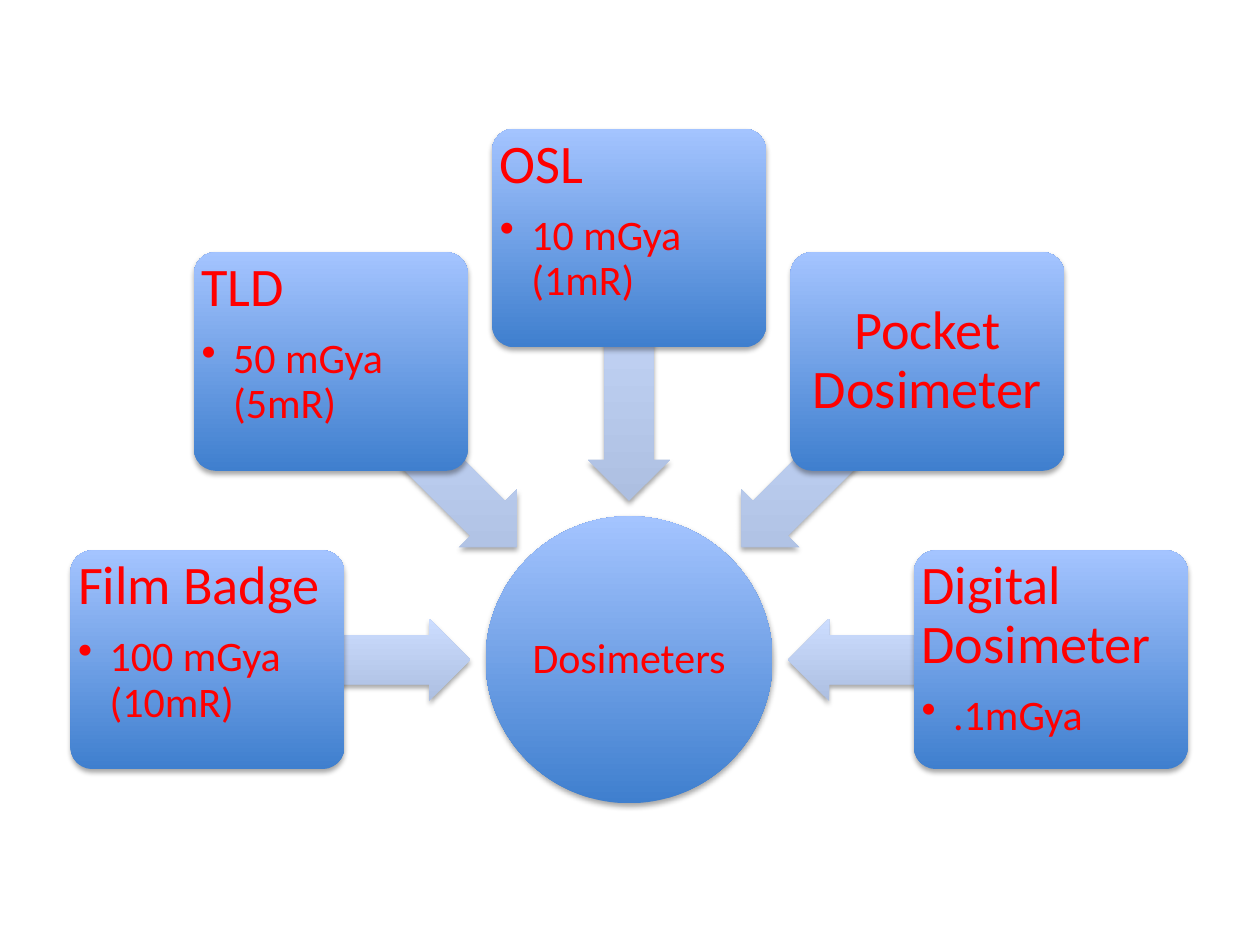
from math import cos, radians, sin

from lxml.etree import SubElement
from pptx import Presentation
from pptx.dml.color import RGBColor
from pptx.enum.shapes import MSO_SHAPE as Shape
from pptx.enum.text import MSO_ANCHOR as Anchor, PP_ALIGN as Align
from pptx.oxml.ns import qn
from pptx.util import Pt

RED = RGBColor(0xFF, 0x00, 0x00)
BOX_DARK = RGBColor(0x3F, 0x7F, 0xCE)
BOX_LIGHT = RGBColor(0xA4, 0xC4, 0xFF)
ARROW_DARK = RGBColor(0xAD, 0xBF, 0xE1)
ARROW_LIGHT = RGBColor(0xCC, 0xDD, 0xFF)

# Radial layout, in points
CENTER_X, CENTER_Y = 359.5, 377
HUB_SIZE = 164
BOX_RADIUS, BOX_WIDTH, BOX_HEIGHT = 241, 156.5, 125
ARROW_RADIUS, ARROW_LENGTH, ARROW_WIDTH = 166, 150.5, 47

# Angle around the hub, heading, bullet
DOSIMETERS = [
    (180, "Film Badge", "100 mGya (10mR)"),
    (135, "TLD", "50 mGya (5mR)"),
    (90, "OSL", "10 mGya (1mR)"),
    (45, "Pocket Dosimeter", None),
    (0, "Digital Dosimeter", ".1mGya"),
]


def write(paragraph, text, size=24, align=Align.LEFT, space_after=0.35, bullet=False):
    paragraph.alignment = align
    paragraph.line_spacing = 0.9
    paragraph.space_after = Pt(round(size * space_after, 1))
    run = paragraph.add_run()
    run.text = text
    run.font.name = "Calibri"
    run.font.size = Pt(size)
    run.font.color.rgb = RED
    if bullet:
        paragraph.level = 1
        properties = paragraph._p.get_or_add_pPr()
        properties.set("marL", str(Pt(18)))
        properties.set("indent", str(Pt(-18)))
        SubElement(properties, qn("a:buChar"), char="•")


class RadialDiagram:
    """Holds the slide and draws the parts of the diagram on it."""

    def __init__(self, slide):
        self.slide = slide

    def add_shape(self, kind, angle, radius, width, height, dark, light):
        x = CENTER_X + radius * cos(radians(angle))
        y = CENTER_Y - radius * sin(radians(angle))
        shape = self.slide.shapes.add_shape(
            kind, Pt(x - width / 2), Pt(y - height / 2), Pt(width), Pt(height))
        shape.line.fill.background()
        shape.fill.gradient()
        shape.fill.gradient_angle = 90
        for stop, color in zip(shape.fill.gradient_stops, (dark, light)):
            stop.color.rgb = color
        # Keep the light side on top of turned shapes
        shape._element.spPr.find(qn("a:gradFill")).set("rotWithShape", "0")
        self.add_shadow(shape)
        return shape

    def add_shadow(self, shape):
        shape.shadow.inherit = False
        effects = shape._element.spPr.find(qn("a:effectLst"))
        shadow = SubElement(effects, qn("a:outerShdw"), blurRad=str(Pt(3.1)),
                            dist=str(Pt(1.8)), dir="5400000", rotWithShape="0")
        color = SubElement(shadow, qn("a:srgbClr"), val="000000")
        SubElement(color, qn("a:alpha"), val="35000")

    def prepare_text(self, shape, margin, anchor):
        frame = shape.text_frame
        frame.word_wrap = True
        frame.vertical_anchor = anchor
        frame.margin_left = frame.margin_right = Pt(margin)
        frame.margin_top = frame.margin_bottom = Pt(margin)
        return frame

    def add_hub(self, text):
        hub = self.add_shape(Shape.OVAL, 0, 0, HUB_SIZE, HUB_SIZE, BOX_DARK, BOX_LIGHT)
        frame = self.prepare_text(hub, 1.5, Anchor.MIDDLE)
        write(frame.paragraphs[0], text, align=Align.CENTER)

    def add_arrow(self, angle):
        arrow = self.add_shape(Shape.LEFT_ARROW, angle, ARROW_RADIUS, ARROW_LENGTH,
                               ARROW_WIDTH, ARROW_DARK, ARROW_LIGHT)
        arrow.adjustments[0] = 0.6
        arrow.adjustments[1] = 0.5
        arrow.rotation = -angle % 360

    def add_box(self, angle, heading, bullet):
        box = self.add_shape(Shape.ROUNDED_RECTANGLE, angle, BOX_RADIUS, BOX_WIDTH,
                             BOX_HEIGHT, BOX_DARK, BOX_LIGHT)
        box.adjustments[0] = 0.1
        frame = self.prepare_text(box, 0.7, Anchor.TOP if bullet else Anchor.MIDDLE)
        write(frame.paragraphs[0], heading, size=31,
              align=Align.LEFT if bullet else Align.CENTER)
        if bullet:
            write(frame.add_paragraph(), bullet, space_after=0.15, bullet=True)


def main():
    presentation = Presentation()
    presentation.slide_width, presentation.slide_height = Pt(720), Pt(540)
    blank_layout = presentation.slide_layouts[6]
    diagram = RadialDiagram(presentation.slides.add_slide(blank_layout))

    # Hub, then each arrow under its box
    diagram.add_hub("Dosimeters")
    for angle, heading, bullet in DOSIMETERS:
        diagram.add_arrow(angle)
        diagram.add_box(angle, heading, bullet)

    presentation.save("out.pptx")


if __name__ == "__main__":
    main()
